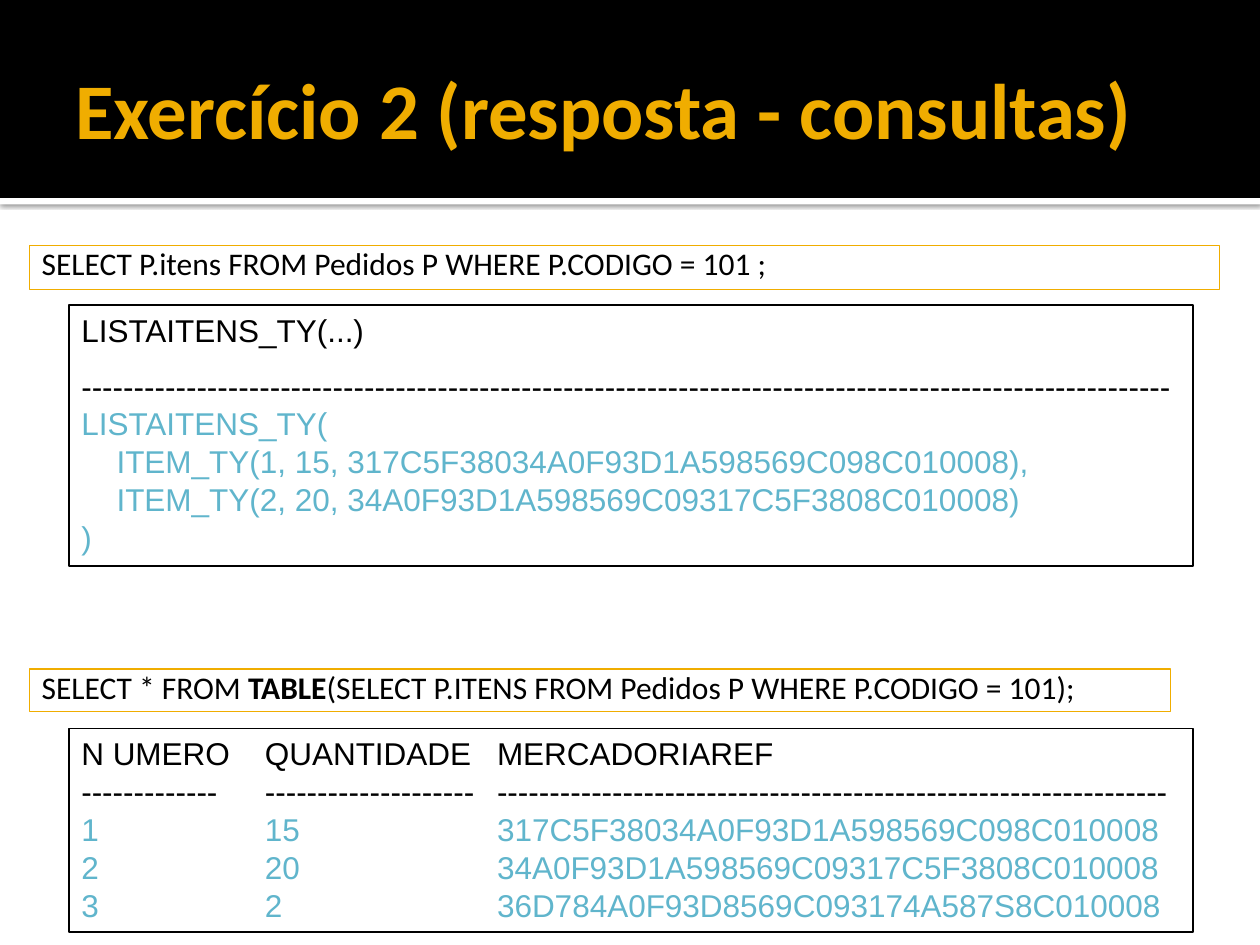
"""Build the slide with the query answers of exercise 2."""
from dataclasses import dataclass

from lxml.etree import SubElement
from pptx import Presentation
from pptx.dml.color import RGBColor
from pptx.enum.shapes import MSO_SHAPE
from pptx.enum.text import MSO_ANCHOR, PP_ALIGN
from pptx.oxml.ns import qn
from pptx.util import Cm, Pt


@dataclass(frozen=True)
class Theme:
    black: RGBColor = RGBColor(0x00, 0x00, 0x00)
    white: RGBColor = RGBColor(0xFF, 0xFF, 0xFF)
    gold: RGBColor = RGBColor(0xF0, 0xAD, 0x00)
    blue: RGBColor = RGBColor(0x60, 0xB5, 0xCC)
    title_font: str = "Calibri"
    query_font: str = "Calibri"
    result_font: str = "Arial"
    title_size: Pt = Pt(45)
    body_size: Pt = Pt(18)
    line_width: Pt = Pt(0.75)


THEME = Theme()
RESULT_LEFT, RESULT_WIDTH = 1.39, 22.66
QUERY_LEFT = 0.59
COLUMN_STOPS = (3.7, 8.38)


def add_box(slide, left, top, width, height, fill=None, line=None):
    shape = slide.shapes.add_shape(
        MSO_SHAPE.RECTANGLE, Cm(left), Cm(top), Cm(width), Cm(height))
    shape.shadow.inherit = False
    if fill is None:
        shape.fill.background()
    else:
        shape.fill.solid()
        shape.fill.fore_color.rgb = fill
    if line is None:
        shape.line.fill.background()
    else:
        shape.line.color.rgb = line
        shape.line.width = THEME.line_width
    shape.text_frame.word_wrap = True
    shape.text_frame.vertical_anchor = MSO_ANCHOR.TOP
    return shape


def add_drop_shadow(shape):
    effects = shape._element.spPr.find(qn("a:effectLst"))
    shadow = SubElement(effects, qn("a:outerShdw"), blurRad=str(Pt(2.5)),
                        dist=str(Pt(0.8)), dir="5400000", rotWithShape="0")
    color = SubElement(shadow, qn("a:srgbClr"), val=str(THEME.black))
    SubElement(color, qn("a:alpha"), val="60000")


def set_tab_stops(paragraph, stops):
    tabs = SubElement(paragraph._p.get_or_add_pPr(), qn("a:tabLst"))
    for stop in stops:
        SubElement(tabs, qn("a:tab"), pos=str(Cm(stop)), algn="l")


def set_font(paragraph, name, size, color, bold=False):
    paragraph.alignment = PP_ALIGN.LEFT
    font = paragraph.font
    font.name, font.size, font.bold = name, size, bold
    font.color.rgb = color


def add_header(slide, text):
    add_drop_shadow(add_box(slide, 0, 3.99, 25.4, 0.13, fill=THEME.white))
    add_box(slide, 0, 0, 25.4, 3.99, fill=THEME.black)
    title = slide.shapes.add_textbox(Cm(1.27), Cm(0.43), Cm(22.86), Cm(3.48))
    frame = title.text_frame
    frame.word_wrap = True
    frame.vertical_anchor = MSO_ANCHOR.MIDDLE
    frame.margin_right = Cm(0.13)
    paragraph = frame.paragraphs[0]
    paragraph.add_run().text = text
    set_font(paragraph, THEME.title_font, THEME.title_size, THEME.gold, bold=True)


def add_query(slide, top, width, height, before, keyword="", after=""):
    box = add_box(slide, QUERY_LEFT, top, width, height, line=THEME.gold)
    paragraph = box.text_frame.paragraphs[0]
    paragraph.line_spacing = 0.8
    for text, bold in ((before, False), (keyword, True), (after, False)):
        if text:
            run = paragraph.add_run()
            run.text = text
            if bold:
                run.font.bold = True
    set_font(paragraph, THEME.query_font, THEME.body_size, THEME.black)


def add_result(slide, top, height, head, body, rule_gap=0, indented=(), stops=()):
    box = add_box(slide, RESULT_LEFT, top, RESULT_WIDTH, height, line=THEME.black)
    frame = box.text_frame
    for index, text in enumerate(head + body):
        paragraph = frame.paragraphs[0] if index == 0 else frame.add_paragraph()
        paragraph.add_run().text = text
        if index == 1 and rule_gap:
            paragraph.space_before = Pt(rule_gap)
        if text in indented:
            paragraph._p.get_or_add_pPr().set("marL", str(Cm(0.71)))
        if stops:
            set_tab_stops(paragraph, stops)
        color = THEME.black if index < len(head) else THEME.blue
        set_font(paragraph, THEME.result_font, THEME.body_size, color)


def main():
    presentation = Presentation()
    presentation.slide_width, presentation.slide_height = Cm(25.4), Cm(19.05)
    slide = presentation.slides.add_slide(presentation.slide_layouts[6])

    add_header(slide, "Exercício 2 (resposta - consultas)")

    items = ["ITEM_TY(1, 15, 317C5F38034A0F93D1A598569C098C010008),",
             "ITEM_TY(2, 20, 34A0F93D1A598569C09317C5F3808C010008)"]
    add_result(slide, 6.15, 5.26, ["LISTAITENS_TY(...)", "-" * 104],
               ["LISTAITENS_TY(", *items, ")"], rule_gap=10, indented=items)

    rows = [("N UMERO", "QUANTIDADE", "MERCADORIAREF"),
            ("-" * 13, "-" * 20, "-" * 64),
            ("1", "15", "317C5F38034A0F93D1A598569C098C010008"),
            ("2", "20", "34A0F93D1A598569C09317C5F3808C010008"),
            ("3", "2", "36D784A0F93D8569C093174A587S8C010008")]
    lines = ["\t".join(row) for row in rows]
    add_result(slide, 14.68, 4.11, lines[:2], lines[2:], stops=COLUMN_STOPS)

    add_query(slide, 4.95, 24, 0.89,
              "SELECT P.itens FROM Pedidos P WHERE P.CODIGO = 101 ;")
    add_query(slide, 13.49, 23.01, 0.86, "SELECT * FROM ", "TABLE",
              "(SELECT P.ITENS FROM Pedidos P WHERE P.CODIGO = 101);")

    presentation.save("out.pptx")


if __name__ == "__main__":
    main()
